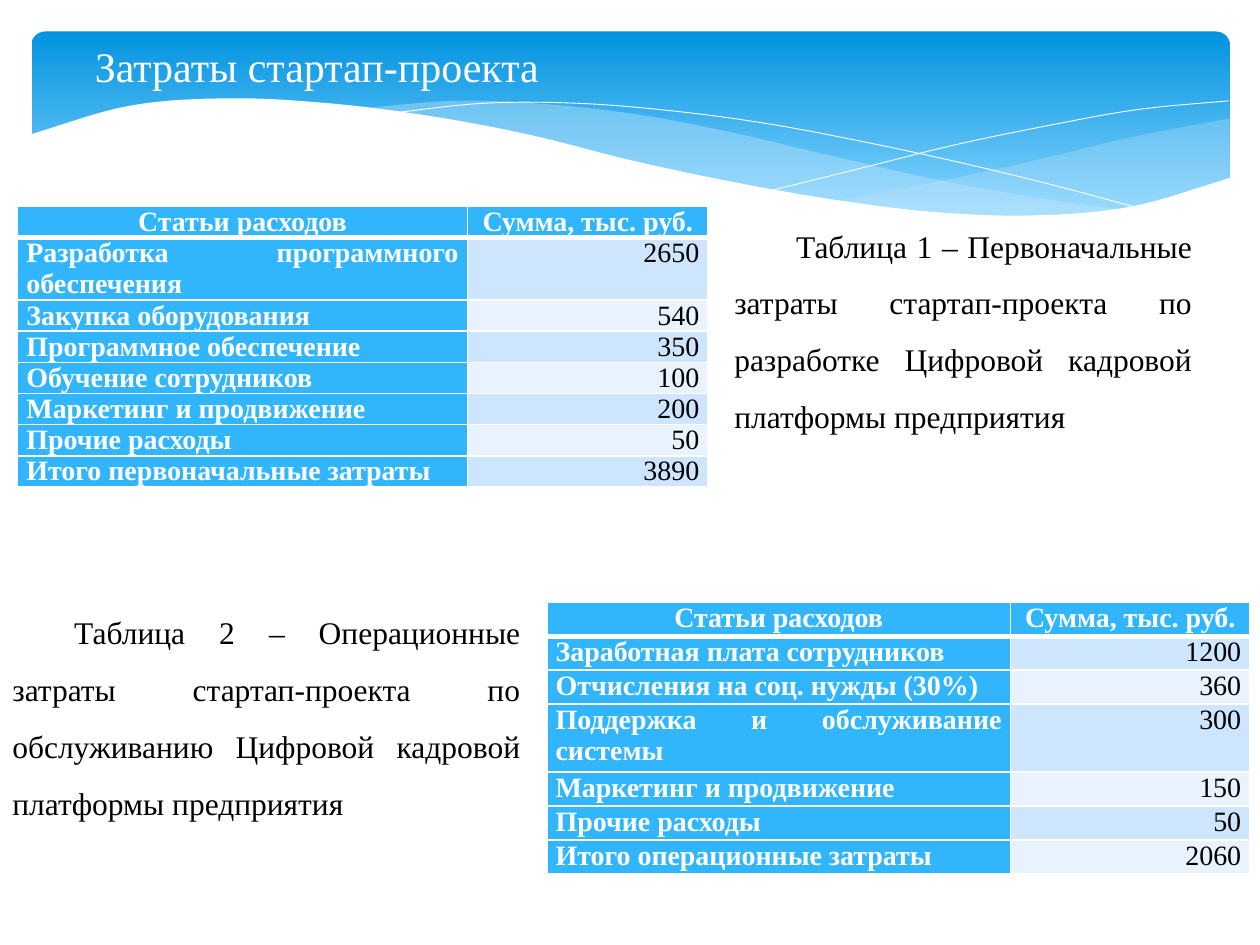
"""Build the startup project cost slide with two expense tables."""
import dataclasses

import lxml.etree
import pptx
import pptx.dml.color
import pptx.enum.shapes
import pptx.enum.text
import pptx.oxml.ns
import pptx.util

Inches = pptx.util.Inches
Pt = pptx.util.Pt
RGB = pptx.dml.color.RGBColor.from_string
ALIGN = pptx.enum.text.PP_ALIGN
qn = pptx.oxml.ns.qn


@dataclasses.dataclass
class Theme:
    font: str = "Times New Roman"
    white: str = "FFFFFF"
    black: str = "000000"
    banner_top: str = "0293E0"
    banner_bottom: str = "83D3FE"
    wave: str = "C6E7FC"
    header: str = "31B6FD"
    bands: tuple = ("CEE5FE", "E8F3FF")
    title_size: int = 24
    caption_size: int = 18
    table_size: int = 16


theme = Theme()


def add_wave(edges, fill=None, alpha=100, steps=8):
    """Join edges (x from, x to, evenly spaced heights) smoothed by Catmull-Rom splines."""
    pts = []
    for x_from, x_to, heights in edges:
        spans = len(heights) - 1
        before = 2 * heights[0] - heights[1]
        beyond = 2 * heights[-1] - heights[-2]
        knots = [before, *heights, beyond]
        for n in range(spans * steps + 1):
            k = min(n // steps, spans - 1)
            t = n / steps - k
            a, b, c, d = knots[k:k + 4]
            y = b + t / 2 * (c - a + t * (2*a - 5*b + 4*c - d + t * (3*b - a - 3*c + d)))
            x = x_from + (x_to - x_from) * n / (spans * steps)
            pts.append((Inches(x), Inches(y)))
    fb = s.shapes.build_freeform(*pts[0], scale=1.0)
    fb.add_line_segments(pts[1:], close=fill is not None)
    sp = fb.convert_to_shape()
    sp.shadow.inherit = False
    if fill is None:
        sp.fill.background()
        sp.line.color.rgb = RGB(theme.white)
        sp.line.width = Pt(0.5)
        return
    sp.line.fill.background()
    sp.fill.solid()
    sp.fill.fore_color.rgb = RGB(fill)
    if alpha < 100:
        clr = sp.element.spPr.find(qn("a:solidFill"))[0]
        lxml.etree.SubElement(clr, qn("a:alpha"), val=str(alpha * 1000))


def write(tf, text, size, color, align, bold=False, after=0):
    """Fill a text frame with one formatted paragraph and return it."""
    tf.text = text
    p = tf.paragraphs[0]
    p.alignment = align
    p.space_after = Pt(after)
    font = p.runs[0].font
    font.name, font.size, font.bold = theme.font, Pt(size), bold
    font.color.rgb = RGB(color)
    return p


prs = pptx.Presentation()
prs.slide_width, prs.slide_height = Inches(10), Inches(7.5)
s = prs.slides.add_slide(prs.slide_layouts[5])

banner = s.shapes.add_shape(
    pptx.enum.shapes.MSO_SHAPE.ROUNDED_RECTANGLE,
    Inches(0.25), Inches(0.25), Inches(9.51), Inches(1.56))
banner.adjustments[0] = 0.07
banner.shadow.inherit = False
banner.line.fill.background()
banner.fill.gradient()
banner.fill.gradient_angle = 270
stops = zip(banner.fill.gradient_stops, (0, 0.9), (theme.banner_top, theme.banner_bottom))
for stop, position, color in stops:
    stop.position = position
    stop.color.rgb = RGB(color)

right_crest = (6.61, 9.76, [1.6, 1.45, 1.28, 1.09, 0.94])
right_trough = (9.76, 6.61, [1.41, 1.65, 1.72, 1.69, 1.6])
middle_crest = (2.86, 8.93, [0.86, 0.8, 0.83, 0.92, 1.07, 1.25, 1.42, 1.56, 1.67])
middle_trough = (8.93, 2.86, [1.67, 1.73, 1.7, 1.61, 1.48, 1.31, 1.13, 0.97, 0.86])
falling_line = (3.09, 9.07, [0.9, 0.82, 0.82, 0.88, 0.98, 1.12, 1.28, 1.46, 1.66])
rising_line = (6.13, 9.75, [1.51, 1.33, 1.15, 1, 0.87, 0.8])
page_top = (0.23, 9.77, [1.07, 0.84, 0.78, 0.82, 0.92, 1.07, 1.27,
                         1.44, 1.58, 1.68, 1.71, 1.64, 1.41])
page_bottom = (9.77, 0.23, [2.24, 2.24])

add_wave([right_crest, right_trough], theme.wave, alpha=29)
add_wave([middle_crest, middle_trough], theme.wave, alpha=40)
add_wave([falling_line])
add_wave([rising_line])
add_wave([page_top, page_bottom], theme.white)

header = ("Статьи расходов", "Сумма, тыс. руб.")
initial_costs = [
    header,
    ("Разработка программного обеспечения", "2650"),
    ("Закупка оборудования", "540"),
    ("Программное обеспечение", "350"),
    ("Обучение сотрудников", "100"),
    ("Маркетинг и продвижение", "200"),
    ("Прочие расходы", "50"),
    ("Итого первоначальные затраты", "3890")]
operating_costs = [
    header,
    ("Заработная плата сотрудников", "1200"),
    ("Отчисления на соц. нужды (30%)", "360"),
    ("Поддержка и обслуживание системы", "300"),
    ("Маркетинг и продвижение", "150"),
    ("Прочие расходы", "50"),
    ("Итого операционные затраты", "2060")]
longest_single_line = 30
tables = [
    (initial_costs, 0.14, 1.64, (3.57, 1.91), 0.24),
    (operating_costs, 4.34, 4.78, (3.68, 1.9), 0.27)]
for rows, x, y, widths, line_height in tables:
    heights = [line_height * (2 if len(name) > longest_single_line else 1) for name, _ in rows]
    tbl = s.shapes.add_table(len(rows), len(header), Inches(x), Inches(y),
                             Inches(sum(widths)), Inches(sum(heights))).table
    for col, width in zip(tbl.columns, widths):
        col.width = Inches(width)
    for i, row in enumerate(rows):
        tbl.rows[i].height = Inches(heights[i])
        for j, text in enumerate(row):
            cell = tbl.cell(i, j)
            cell.margin_left = cell.margin_right = Inches(0.07)
            cell.margin_top = cell.margin_bottom = 0
            strong = i == 0 or j == 0
            align = ALIGN.CENTER if i == 0 else (ALIGN.JUSTIFY, ALIGN.RIGHT)[j]
            write(cell.text_frame, text, theme.table_size,
                  theme.white if strong else theme.black, align, strong, after=8)
            tcPr = cell._tc.get_or_add_tcPr()
            thick = {"lnT": i == 1, "lnB": i == 0}
            for side in ("lnL", "lnR", "lnT", "lnB"):
                weight = Pt(3 if thick.get(side) else 1)
                ln = lxml.etree.SubElement(tcPr, qn("a:" + side), w=str(weight))
                solid = lxml.etree.SubElement(ln, qn("a:solidFill"))
                lxml.etree.SubElement(solid, qn("a:srgbClr"), val=theme.white)
            cell.fill.solid()
            cell.fill.fore_color.rgb = RGB(theme.header if strong else theme.bands[(i - 1) % 2])

captions = [
    ("Таблица 1 – Первоначальные затраты стартап-проекта по разработке "
     "Цифровой кадровой платформы предприятия", 5.73, 1.6, 3.83),
    ("Таблица 2 – Операционные затраты стартап-проекта по обслуживанию "
     "Цифровой кадровой платформы предприятия", 0, 4.67, 4.23)]
for text, x, y, width in captions:
    tf = s.shapes.add_textbox(Inches(x), Inches(y), Inches(width), Inches(1.86)).text_frame
    tf.word_wrap = True
    tf.auto_size = pptx.enum.text.MSO_AUTO_SIZE.SHAPE_TO_FIT_TEXT
    p = write(tf, text, theme.caption_size, theme.black, ALIGN.JUSTIFY, after=8)
    p.line_spacing = 1.5
    p._p.get_or_add_pPr().set("indent", str(Inches(0.49)))

title = s.shapes.title
title.left, title.top, title.width, title.height = 0, Inches(0.27), Inches(5.03), Inches(0.5)
title.text_frame.auto_size = pptx.enum.text.MSO_AUTO_SIZE.NONE
title.text_frame.vertical_anchor = pptx.enum.text.MSO_ANCHOR.TOP
write(title.text_frame, "Затраты стартап-проекта", theme.title_size, theme.white, ALIGN.CENTER)
s.shapes.element.append(title.element)

prs.save("out.pptx")
